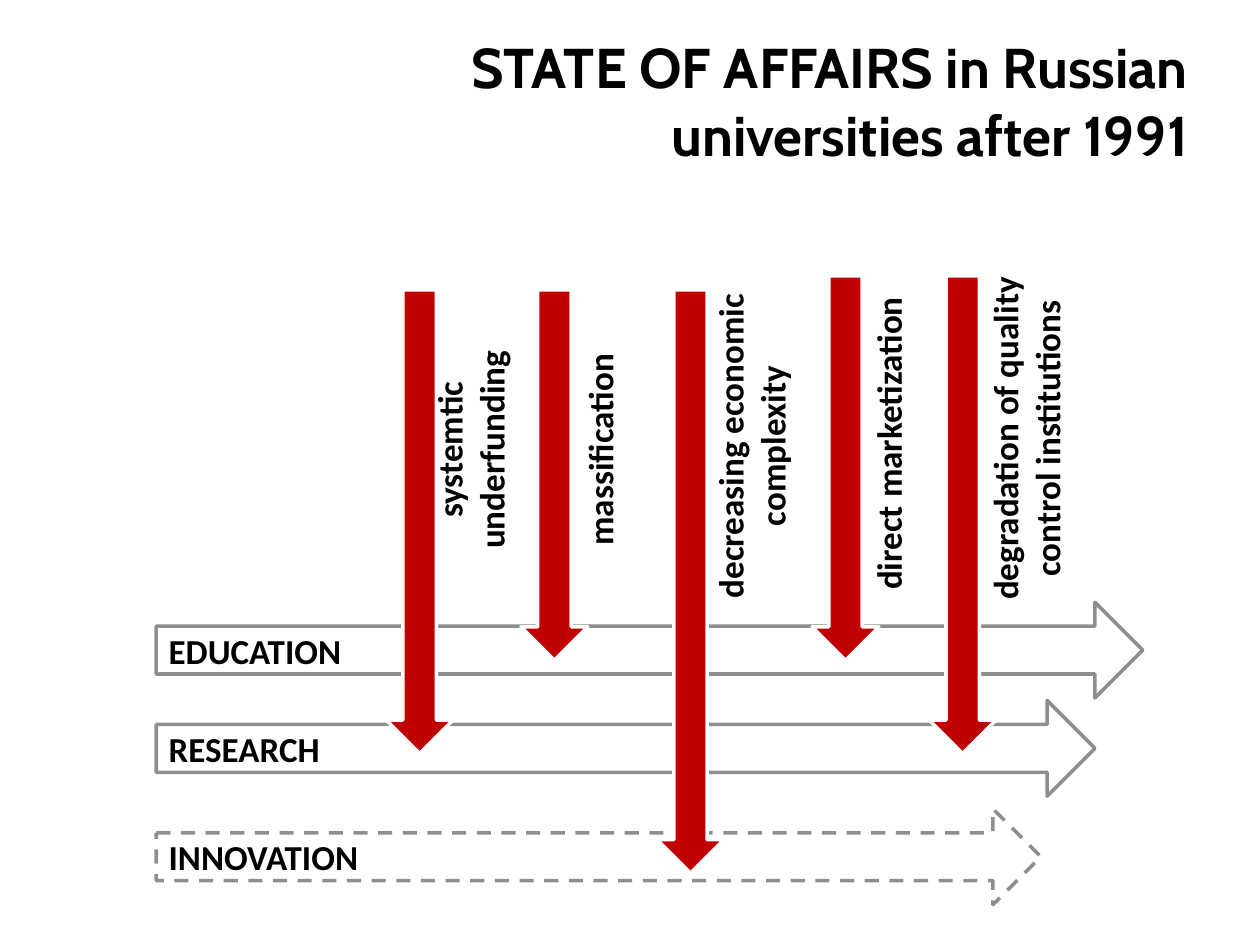
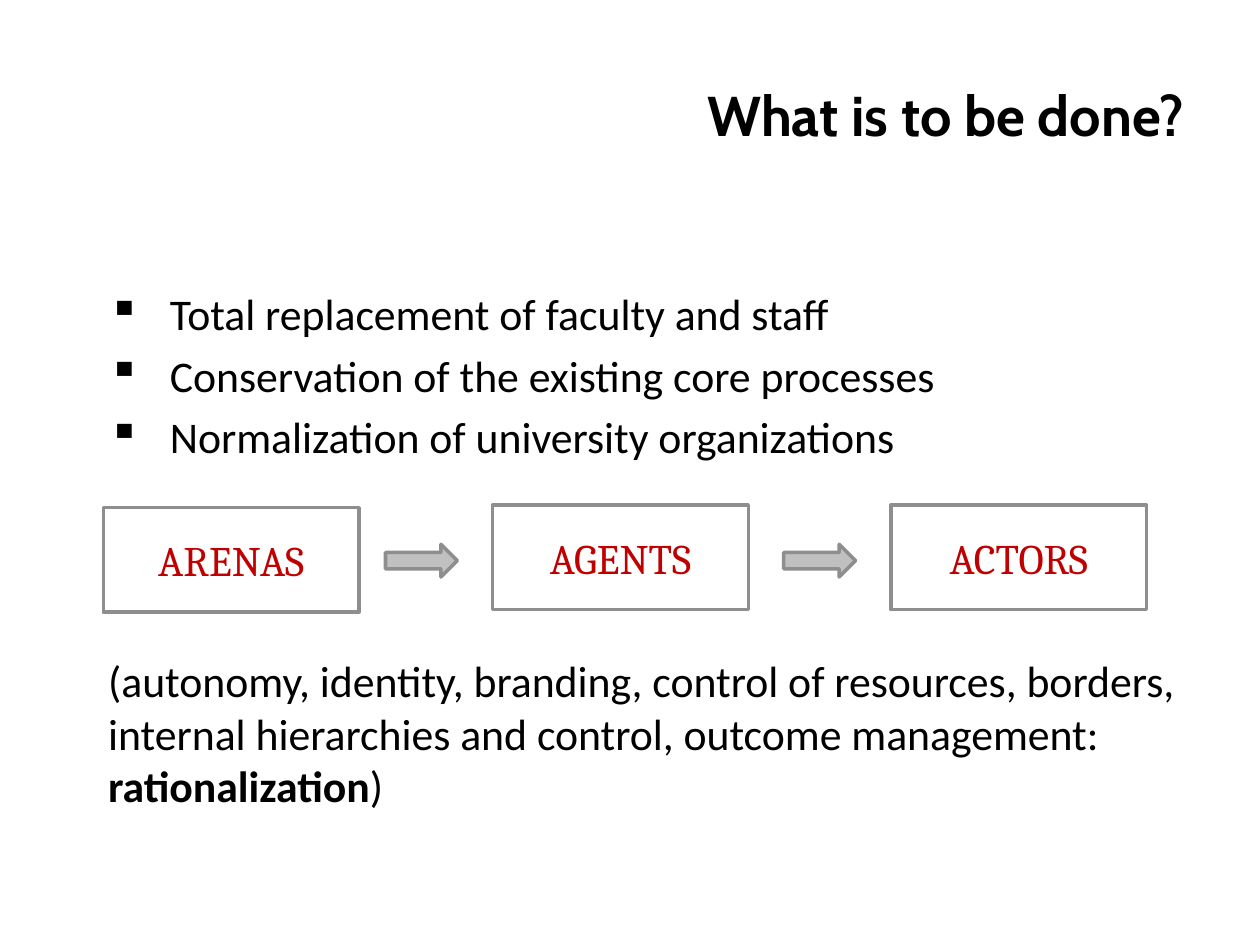
from lxml import etree
from pptx import Presentation
from pptx import util as u
from pptx.dml.color import RGBColor
from pptx.enum import dml, shapes, text
from pptx.oxml import ns

COLORS = {"ink": "000000", "paper": "FFFFFF", "gray": "8E8E8E",
          "silver": "C0C0C0", "red": "C00000"}
ARROW = shapes.MSO_SHAPE.RIGHT_ARROW
RECT = shapes.MSO_SHAPE.RECTANGLE
LEFT, MID, RIGHT = text.PP_ALIGN.LEFT, text.PP_ALIGN.CENTER, text.PP_ALIGN.RIGHT


def color(name):
    return RGBColor.from_string(COLORS[name])


class Deck:
    """Holds the shared style and the current slide."""

    def __init__(self):
        self.prs = Presentation()
        self.prs.slide_width = u.Inches(10)
        self.prs.slide_height = u.Inches(7.5)
        self.slide = None

    def start(self, title, box):
        """Add a slide with its right-aligned title."""
        self.slide = self.prs.slides.add_slide(self.prs.slide_layouts[6])
        frame = self.text(box)
        frame.vertical_anchor = text.MSO_ANCHOR.MIDDLE
        self.fill(frame.paragraphs[0], title, 32, "Cabin", bold=True, align=RIGHT)

    def text(self, box, turn=0):
        """Add an empty wrapping text box and return its frame."""
        shape = self.slide.shapes.add_textbox(*map(u.Inches, box))
        shape.rotation = turn
        shape.text_frame.word_wrap = True
        return shape.text_frame

    def fill(self, para, words, size, face="Calibri", ink="ink", bold=False, align=LEFT):
        """Fill a paragraph with words in one style."""
        para.text = words
        para.alignment = align
        font = para.font
        font.name, font.size, font.bold = face, u.Pt(size), bold
        font.color.rgb = color(ink)

    def shape(self, kind, box, fill=None, line="gray", turn=0):
        """Add a preset shape with a two-point outline."""
        shape = self.slide.shapes.add_shape(kind, *map(u.Inches, box))
        shape.shadow.inherit = False
        shape.rotation = turn
        if fill:
            shape.fill.solid()
            shape.fill.fore_color.rgb = color(fill)
        else:
            shape.fill.background()
        shape.line.color.rgb = color(line)
        shape.line.width = u.Pt(2)
        return shape

    def label(self, shape, words, size, **style):
        """Put words inside a shape, centred top to bottom."""
        frame = shape.text_frame
        frame.word_wrap = True
        frame.vertical_anchor = text.MSO_ANCHOR.MIDDLE
        self.fill(frame.paragraphs[0], words, size, **style)

    def lane(self, words, top, width, dashed=False):
        """Add a horizontal arrow with its name."""
        arrow = self.shape(ARROW, (1.24, top, width, 0.76), "paper")
        if dashed:
            arrow.line.dash_style = dml.MSO_LINE.DASH
        self.label(arrow, words, 20, bold=True)

    def force(self, mid, top, length):
        """Add a red arrow that points down from top."""
        high = 0.53
        box = (mid - length / 2, top + (length - high) / 2, length, high)
        self.shape(ARROW, box, "red", "paper", 90)

    def upright(self, words, x, y, length, high):
        """Add a label that reads upwards, centred on x and y."""
        frame = self.text((x - length / 2, y - high / 2, length, high), 270)
        self.fill(frame.paragraphs[0], words, 20, bold=True, align=MID)

    def bullets(self, box, items):
        """Add a list with square bullets."""
        frame = self.text(box)
        for i, item in enumerate(items):
            para = frame.paragraphs[0] if i == 0 else frame.add_paragraph()
            props = para._p.get_or_add_pPr()
            indent = u.Inches(0.49)
            props.set("marL", str(indent))
            props.set("indent", str(-indent))
            mark = etree.SubElement(props, ns.qn("a:buChar"))
            mark.set("char", "▪")
            if i:
                para.space_before = u.Pt(5)
            self.fill(para, item, 25)


def affairs(deck):
    deck.start("STATE OF AFFAIRS in Russian universities after 1991",
               (3.16, 0.32, 6.37, 0.95))

    # University missions
    deck.lane("EDUCATION", 4.78, 7.83)
    deck.lane("RESEARCH", 5.56, 7.45)
    deck.lane("INNOVATION", 6.42, 7.02, dashed=True)

    # Pressures: arrow middle, top, length; label, its centre, length, height
    one, two = 0.44, 0.77
    for mid, top, length, words, *place in (
        (3.33, 2.3, 3.68, "systemtic underfunding", 3.73, 3.57, 2.68, two),
        (4.4, 2.3, 2.94, "massification", 4.76, 3.57, 2.68, one),
        (5.48, 2.3, 4.63, "decreasing economic complexity", 5.96, 3.54, 2.68, two),
        (6.71, 2.19, 3.05, "direct marketization", 7.05, 3.52, 2.78, one),
        (7.64, 2.19, 3.79, "degradation of quality control institutions",
         8.14, 3.48, 2.78, two),
    ):
        deck.force(mid, top, length)
        deck.upright(words, *place)


def agenda(deck):
    deck.start("What is to be done?", (2.01, 0.43, 7.49, 0.95))

    # Options
    deck.bullets((0.76, 2.23, 8.82, 1.6), (
        "Total replacement of faculty and staff",
        "Conservation of the existing core processes",
        "Normalization of university organizations",
    ))

    # Steps
    for words, left, top in (("ARENAS", 0.82, 4.03), ("AGENTS", 3.91, 4.01),
                             ("ACTORS", 7.07, 4.01)):
        step = deck.shape(RECT, (left, top, 2.03, 0.83))
        deck.label(step, words, 24, face="Cambria", ink="red", align=MID)
    for left in (3.06, 6.22):
        deck.shape(ARROW, (left, 4.32, 0.57, 0.26), "silver")

    # Explanation
    para = deck.text((0.76, 5.14, 8.82, 1.4)).paragraphs[0]
    deck.fill(para, "(autonomy, identity, branding, control of resources, borders, "
              "internal hierarchies and control, outcome management: ", 25)
    for words, bold in (("rationalization", True), (")", False)):
        run = para.add_run()
        run.text, run.font.bold = words, bold


def main():
    deck = Deck()
    affairs(deck)
    agenda(deck)
    deck.prs.save("out.pptx")


if __name__ == "__main__":
    main()
